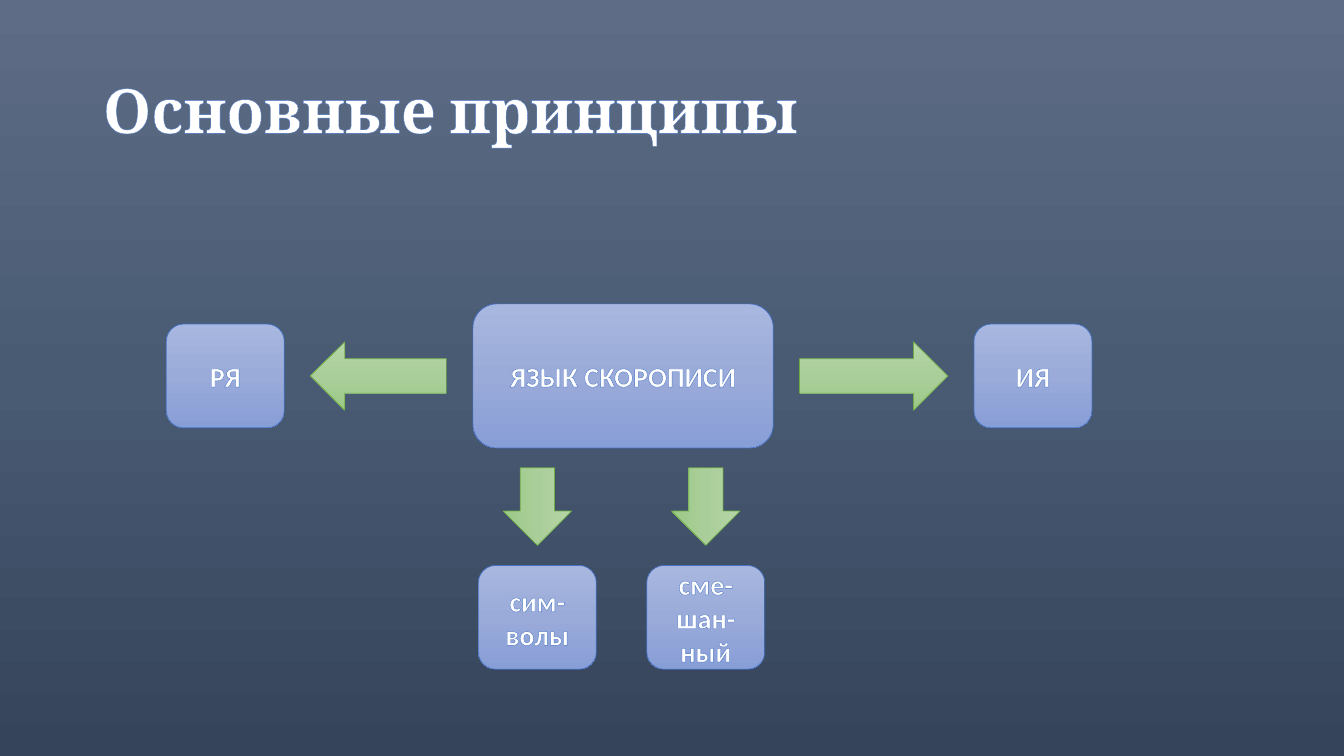
"""Slide showing the language options for shorthand notes around a central box."""
from copy import deepcopy

from lxml import etree
from pptx import Presentation
from pptx.dml.color import RGBColor
from pptx.enum import shapes, text
from pptx.oxml.ns import qn
from pptx.util import Inches, Pt

HEADING = "Основные принципы"
ROW = [
    ("box", "РЯ", 1.17, 1.03),
    ("left", "", 1.35, 0.68),
    ("box", "ЯЗЫК СКОРОПИСИ", 2.98, 1.43),
    ("right", "", 1.47, 0.68),
    ("box", "ИЯ", 1.17, 1.03),
]
BRANCHES = [("сим-волы", 5.33), ("сме-шан-ный", 7.0)]
BRANCH_BOX = (1.17, 1.03)
BRANCH_ARROW = (0.77, 0.68)
ROW_LEFT, ROW_MIDDLE, ROW_GAP = 1.65, 3.73, 0.26
CORE_BOTTOM, BRANCH_GAP = 4.44, 0.2

COLORS = {"text": "FFFFFF", "blue": "4472C4", "green": "70AD47"}
GRADIENTS = {
    "background": ("5E6D85", "495A73", "35445A"),
    "blue": ("A8B7DF", "9AABD9", "889ED7"),
    "green": ("B5D5A7", "AACE9A", "9CC987"),
}


def rgb(name):
    return RGBColor.from_string(COLORS[name])


def paint_gradient(fill, owner, name):
    fill.gradient()
    fill.gradient_angle = 270
    stop_list = owner.find(".//" + qn("a:gsLst"))
    stop_list.insert(1, deepcopy(stop_list[0]))
    for index, (stop, color) in enumerate(zip(fill.gradient_stops, GRADIENTS[name])):
        stop.position = index / 2
        stop.color.rgb = RGBColor.from_string(color)


def format_text(frame, size, font_name, alignment):
    paragraph = frame.paragraphs[0]
    paragraph.alignment = alignment
    frame.vertical_anchor = text.MSO_ANCHOR.MIDDLE
    frame.word_wrap = True
    run = paragraph.runs[0]
    run.font.size, run.font.name, run.font.bold = Pt(size), font_name, True
    run.font.color.rgb = rgb("text")
    outline = etree.Element(qn("a:ln"), w=str(Pt(0.8)))
    solid = etree.SubElement(outline, qn("a:solidFill"))
    etree.SubElement(solid, qn("a:srgbClr"), val=COLORS["blue"])
    run.font._element.insert(0, outline)


def add_part(slide, kind, center_x, center_y, width, height, color):
    part = slide.shapes.add_shape(
        kind, Inches(center_x - width / 2), Inches(center_y - height / 2),
        Inches(width), Inches(height))
    part.shadow.inherit = False
    paint_gradient(part.fill, part._element, color)
    part.line.color.rgb = rgb(color)
    part.line.width = Pt(0.5)
    return part


def add_box(slide, label, *place):
    box = add_part(slide, shapes.MSO_SHAPE.FLOWCHART_ALTERNATE_PROCESS, *place, "blue")
    box.text_frame.text = label
    format_text(box.text_frame, 20, "Calibri", text.PP_ALIGN.CENTER)


def add_arrow(slide, direction, *place):
    arrow = add_part(slide, shapes.MSO_SHAPE.RIGHT_ARROW, *place, "green")
    if direction == "left":
        arrow._element.spPr.find(qn("a:xfrm")).set("flipH", "1")
    elif direction == "down":
        arrow.rotation = 90


def main():
    deck = Presentation()
    deck.slide_width, deck.slide_height = Inches(13.33), Inches(7.5)
    slide = deck.slides.add_slide(deck.slide_layouts[5])
    paint_gradient(slide.background.fill, slide._element, "background")

    heading = slide.shapes.title
    heading.left, heading.top = Inches(0.92), Inches(0.4)
    heading.width, heading.height = Inches(11.5), Inches(1.45)
    heading.text_frame.text = HEADING
    heading.text_frame.paragraphs[0].line_spacing = 0.9
    format_text(heading.text_frame, 44, "Cambria", text.PP_ALIGN.LEFT)

    left = ROW_LEFT
    for role, label, width, height in ROW:
        place = (left + width / 2, ROW_MIDDLE, width, height)
        if role == "box":
            add_box(slide, label, *place)
        else:
            add_arrow(slide, role, *place)
        left += width + ROW_GAP

    arrow_length = BRANCH_ARROW[0]
    arrow_middle = CORE_BOTTOM + BRANCH_GAP + arrow_length / 2
    box_middle = arrow_middle + arrow_length / 2 + BRANCH_GAP + BRANCH_BOX[1] / 2
    for label, center_x in BRANCHES:
        add_arrow(slide, "down", center_x, arrow_middle, *BRANCH_ARROW)
        add_box(slide, label, center_x, box_middle, *BRANCH_BOX)

    deck.save("out.pptx")


if __name__ == "__main__":
    main()
